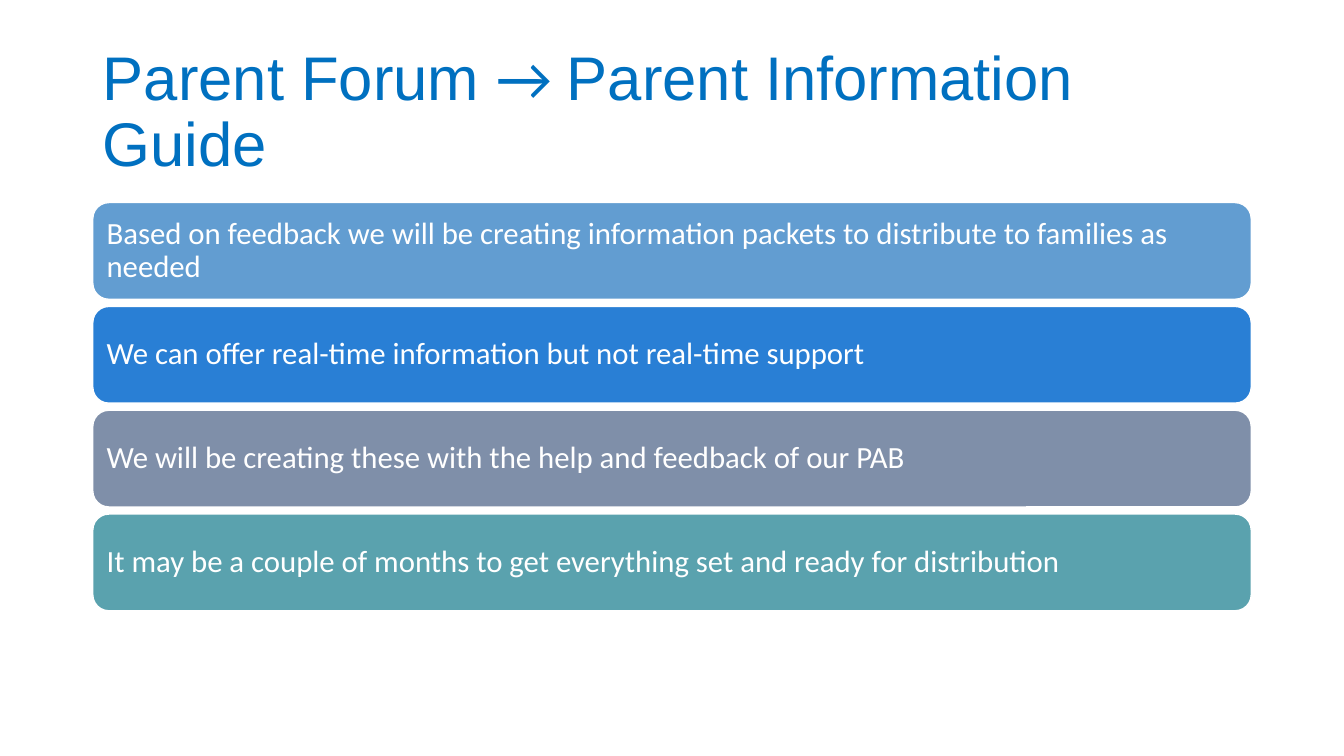
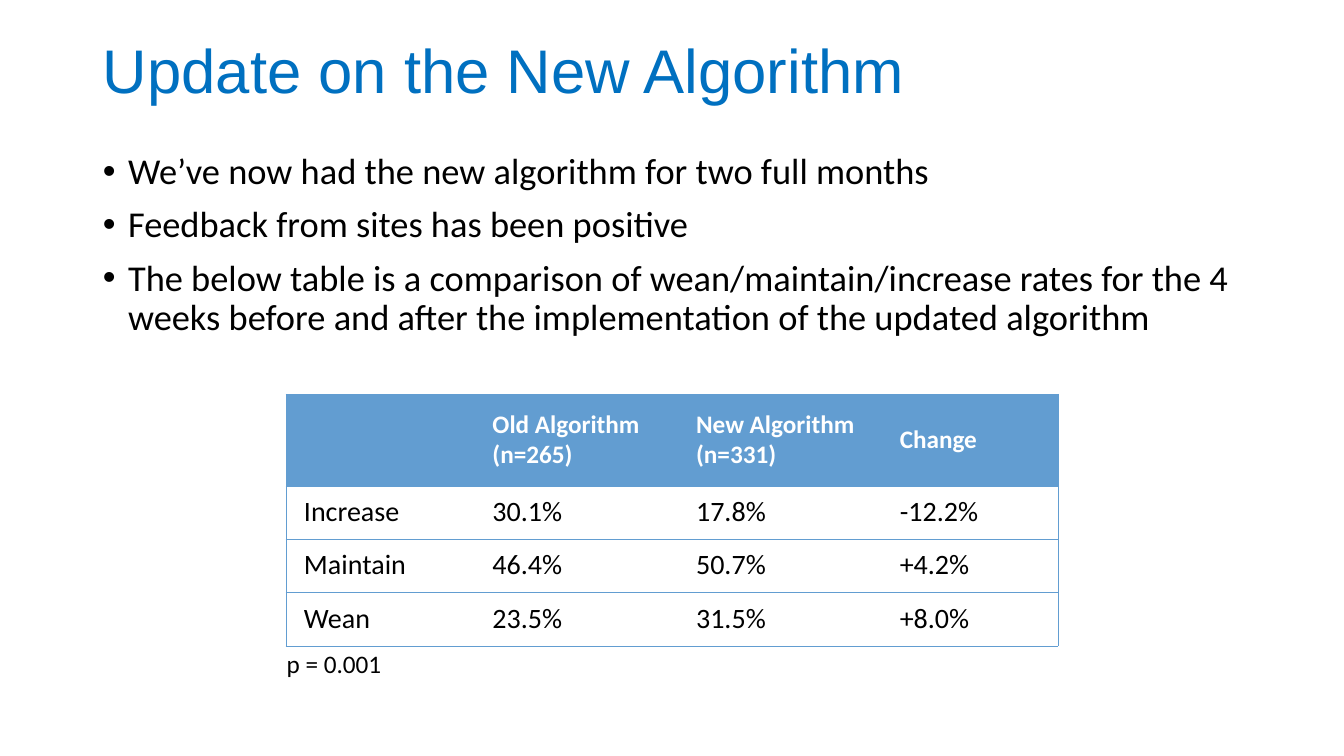
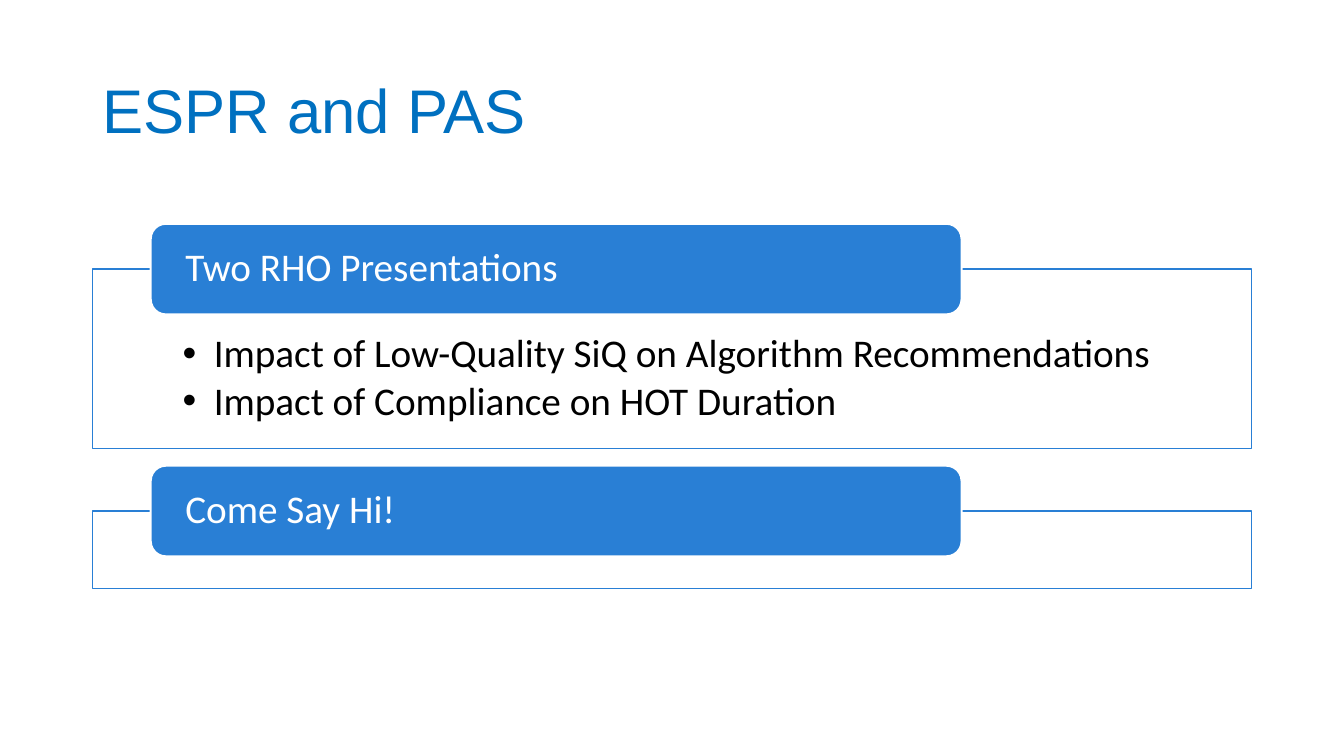
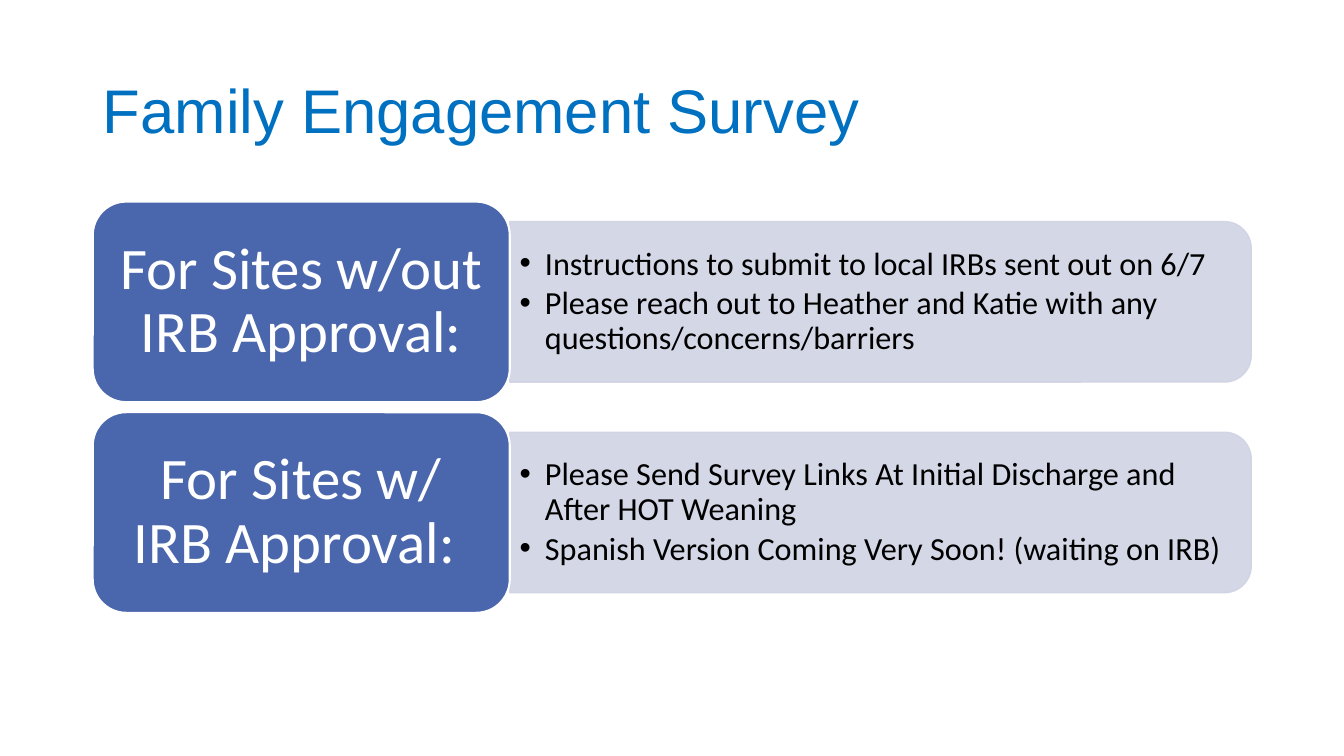
import lxml.etree
import pptx
import pptx.dml.color
import pptx.enum.shapes
import pptx.enum.text
import pptx.oxml.ns
import pptx.util

RGBColor = pptx.dml.color.RGBColor
SHAPE = pptx.enum.shapes.MSO_SHAPE
ANCHOR = pptx.enum.text.MSO_ANCHOR
ALIGN = pptx.enum.text.PP_ALIGN
Inches = pptx.util.Inches
Pt = pptx.util.Pt
qn = pptx.oxml.ns.qn

# Palette and fonts
WHITE = RGBColor(0xFF, 0xFF, 0xFF)
BLACK = RGBColor(0x00, 0x00, 0x00)
TITLE_BLUE = RGBColor(0x00, 0x70, 0xC0)
SKY = RGBColor(0x62, 0x9D, 0xD1)
BLUE = RGBColor(0x29, 0x7F, 0xD5)
SLATE = RGBColor(0x7F, 0x8F, 0xA9)
TEAL = RGBColor(0x5A, 0xA2, 0xAE)
INDIGO = RGBColor(0x4A, 0x66, 0xAC)
LAVENDER = RGBColor(0xD0, 0xD3, 0xE3)
TITLE_FONT, BODY_FONT = "Arial", "Calibri"

# Shared grid, in inches
SLIDE_W, SLIDE_H = 13.33, 7.5
MARGIN = 0.92
CONTENT_W = SLIDE_W - 2 * MARGIN
TITLE_TOP, TITLE_H = 0.4, 1.45

LAYOUT_BODY, LAYOUT_TITLE_ONLY = 1, 5
NO_TABLE_STYLE = "{2D5ABB26-0587-4C30-8999-92F81FD0307C}"


def place(part, left, top, width, height):
    part.left, part.top = Inches(left), Inches(top)
    part.width, part.height = Inches(width), Inches(height)


def add_bullet(paragraph, indent):
    properties = paragraph._p.get_or_add_pPr()
    properties.set("marL", str(Inches(indent)))
    properties.set("indent", str(-Inches(indent)))
    lxml.etree.SubElement(properties, qn("a:buFont")).set("typeface", "Arial")
    lxml.etree.SubElement(properties, qn("a:buChar")).set("char", "•")


def style_paragraph(paragraph, size, color, font=BODY_FONT, bold=False,
                    align=ALIGN.LEFT, spacing=0.9):
    paragraph.alignment = align
    paragraph.line_spacing = spacing
    paragraph.space_before = paragraph.space_after = Pt(0)
    paragraph.font.name, paragraph.font.size = font, Pt(size)
    paragraph.font.bold, paragraph.font.color.rgb = bold, color


def set_frame(frame, anchor, insets=(0.1, 0.05, 0.1, 0.05)):
    frame.word_wrap = True
    frame.auto_size = pptx.enum.text.MSO_AUTO_SIZE.NONE
    frame.vertical_anchor = anchor
    (frame.margin_left, frame.margin_top,
     frame.margin_right, frame.margin_bottom) = map(Inches, insets)


def write_line(frame, text, size, color, **style):
    frame.text = text
    style_paragraph(frame.paragraphs[0], size, color, **style)


def write_list(frame, items, size, indent, gap):
    """Bulleted list with the same gap, in points, between items."""
    for index, item in enumerate(items):
        paragraph = frame.add_paragraph() if index else frame.paragraphs[0]
        paragraph.text = item
        add_bullet(paragraph, indent)
        style_paragraph(paragraph, size, BLACK)
        if index:
            paragraph.space_before = Pt(gap)


def add_titled_slide(deck, *title_runs, layout=LAYOUT_TITLE_ONLY, top=TITLE_TOP):
    """Title runs are strings; an arrow run takes the body font."""
    slide = deck.slides.add_slide(deck.slide_layouts[layout])
    title = slide.shapes.title
    place(title, MARGIN, top, CONTENT_W, TITLE_H)
    set_frame(title.text_frame, ANCHOR.MIDDLE)
    paragraph = title.text_frame.paragraphs[0]
    style_paragraph(paragraph, 44, TITLE_BLUE, font=TITLE_FONT)
    for text in title_runs:
        run = paragraph.add_run()
        run.text = text
        if "→" in text:
            run.font.name = BODY_FONT
    return slide


def add_panel(slide, kind, box, fill, line, line_width):
    panel = slide.shapes.add_shape(kind, *map(Inches, box))
    panel.shadow.inherit = False
    panel.fill.solid()
    panel.fill.fore_color.rgb = fill
    panel.line.color.rgb = line
    panel.line.width = Pt(line_width)
    return panel


def add_label(slide, box, fill, text, size, insets, line_width=1.5, align=ALIGN.LEFT):
    label = add_panel(slide, SHAPE.ROUNDED_RECTANGLE, box, fill, WHITE, line_width)
    set_frame(label.text_frame, ANCHOR.MIDDLE, insets)
    write_line(label.text_frame, text, size, WHITE, align=align)


def add_text_box(slide, box, anchor):
    frame = slide.shapes.add_textbox(*map(Inches, box)).text_frame
    set_frame(frame, anchor)
    return frame


def set_opacity(panel, percent):
    for color in panel._element.spPr.iter(qn("a:srgbClr")):
        lxml.etree.SubElement(color, qn("a:alpha")).set("val", str(percent * 1000))


def add_border(cell, side):
    edge = lxml.etree.SubElement(cell._tc.get_or_add_tcPr(), qn("a:ln" + side))
    edge.set("w", str(Pt(0.5)))
    fill = lxml.etree.SubElement(edge, qn("a:solidFill"))
    lxml.etree.SubElement(fill, qn("a:srgbClr")).set("val", str(SKY))


def add_rate_table(slide, box, column_widths, row_heights, rows):
    table = slide.shapes.add_table(len(rows), len(column_widths),
                                   *map(Inches, box)).table
    table._tbl.tblPr.find(qn("a:tableStyleId")).text = NO_TABLE_STYLE
    table.horz_banding = False
    for column, width in zip(table.columns, column_widths):
        column.width = Inches(width)
    for r, (texts, height) in enumerate(zip(rows, row_heights)):
        table.rows[r].height = Inches(height)
        header = r == 0
        for c, text in enumerate(texts):
            cell = table.cell(r, c)
            if c == 0:
                add_border(cell, "L")
            if c == len(texts) - 1:
                add_border(cell, "R")
            add_border(cell, "T")
            add_border(cell, "B")
            cell.fill.solid()
            cell.fill.fore_color.rgb = SKY if header else WHITE
            cell.vertical_anchor = ANCHOR.MIDDLE if header else ANCHOR.TOP
            cell.margin_left = cell.margin_right = Inches(0.18)
            cell.margin_top = cell.margin_bottom = Inches(0.09)
            write_line(cell.text_frame, text, 18 if header else 20,
                       WHITE if header else BLACK, bold=header, spacing=1.0)


def build_parent_guide(deck):
    slide = add_titled_slide(deck, "Parent Forum ", "→ ", "Parent Information Guide")
    messages = [
        (SKY, "Based on feedback we will be creating information packets to "
              "distribute to families as needed"),
        (BLUE, "We can offer real-time information but not real-time support"),
        (SLATE, "We will be creating these with the help and feedback of our PAB"),
        (TEAL, "It may be a couple of months to get everything set and ready "
               "for distribution"),
    ]
    first_top, bar_h, gap = 2.01, 0.96, 0.07
    for row, (fill, message) in enumerate(messages):
        box = (MARGIN, first_top + row * (bar_h + gap), CONTENT_W, bar_h)
        add_label(slide, box, fill, message, 22, (0.09,) * 4, line_width=1)


def build_algorithm_update(deck):
    slide = add_titled_slide(deck, "Update on the New Algorithm",
                             layout=LAYOUT_BODY, top=0)
    # Summary points
    summary = slide.placeholders[1]
    place(summary, MARGIN, 1.47, CONTENT_W, 2.47)
    set_frame(summary.text_frame, ANCHOR.TOP)
    write_list(summary.text_frame, [
        "We’ve now had the new algorithm for two full months",
        "Feedback from sites has been positive",
        "The below table is a comparison of wean/maintain/increase rates for the 4 "
        "weeks before and after the implementation of the updated algorithm",
    ], 26, 0.25, 10)

    # Rates before and after, centred on two thirds of the content width
    table_left = MARGIN + CONTENT_W / 6
    row_heights = [0.91, 0.53, 0.53, 0.53]
    add_rate_table(slide, (table_left, 3.91, CONTENT_W * 2 / 3, sum(row_heights)),
                   [1.87, 2.02, 2.02, 1.75], row_heights, [
        ("", "Old Algorithm (n=265)", "New Algorithm (n=331)", "Change"),
        ("Increase", "30.1%", "17.8%", "-12.2%"),
        ("Maintain", "46.4%", "50.7%", "+4.2%"),
        ("Wean", "23.5%", "31.5%", "+8.0%"),
    ])
    p_value = add_text_box(slide, (table_left - 0.09, 6.38, 1.53, 0.4), ANCHOR.TOP)
    write_line(p_value, "p = 0.001", 18, BLACK, spacing=1.0)


def build_conferences(deck):
    slide = add_titled_slide(deck, "ESPR and PAS")
    sections = [
        ("Two RHO Presentations", 1.78,
         ["Impact of Low-Quality SiQ on Algorithm Recommendations",
          "Impact of Compliance on HOT Duration"]),
        ("Come Say Hi!", 0.77, []),
    ]
    top, tab_h, gap = 2.22, 0.9, 0.17
    for heading, frame_h, talks in sections:
        # The heading tab straddles the top edge of its frame
        frame_top = top + tab_h / 2
        outline = add_panel(slide, SHAPE.RECTANGLE,
                            (MARGIN, frame_top, CONTENT_W, frame_h), WHITE, BLUE, 1)
        if talks:
            set_frame(outline.text_frame, ANCHOR.TOP, (0.89, 0.64, 0.89, 0.22))
            write_list(outline.text_frame, talks, 28, 0.31, 4)
        tab = (MARGIN + 0.05 * CONTENT_W, top, 0.7 * CONTENT_W, tab_h)
        add_label(slide, tab, BLUE, heading, 28, (0.3, 0, 0.3, 0))
        top = frame_top + frame_h + gap


def build_survey(deck):
    slide = add_titled_slide(deck, "Family Engagement Survey")
    groups = [
        ("For Sites w/out IRB Approval:",
         ["Instructions to submit to local IRBs sent out on 6/7",
          "Please reach out to Heather and Katie with any "
          "questions/concerns/barriers"]),
        ("For Sites w/ IRB Approval: ",
         ["Please Send Survey Links At Initial Discharge and After HOT Weaning",
          "Spanish Version Coming Very Soon! (waiting on IRB)"]),
    ]
    first_top, label_h = 2.0, 1.99
    label_w = 0.36 * CONTENT_W
    panel_left, panel_w, panel_h = MARGIN + label_w, CONTENT_W - label_w, 0.8 * label_h
    for row, (heading, steps) in enumerate(groups):
        top = first_top + row * 1.05 * label_h
        middle = top + label_h / 2
        # Quarter turn puts the two rounded corners on the right
        panel = add_panel(slide, SHAPE.ROUND_2_SAME_RECTANGLE,
                          (panel_left + (panel_w - panel_h) / 2, middle - panel_w / 2,
                           panel_h, panel_w), LAVENDER, LAVENDER, 1)
        panel.rotation = 90
        set_opacity(panel, 90)
        details = add_text_box(slide, (panel_left, middle - panel_h / 2,
                                       panel_w - 0.08, panel_h), ANCHOR.MIDDLE)
        write_list(details, steps, 23, 0.25, 3.5)
        add_label(slide, (MARGIN, top, label_w, label_h), INDIGO, heading, 42,
                  (0.17, 0.09, 0.17, 0.09), align=ALIGN.CENTER)


def main():
    deck = pptx.Presentation()
    deck.slide_width, deck.slide_height = Inches(SLIDE_W), Inches(SLIDE_H)
    build_parent_guide(deck)
    build_algorithm_update(deck)
    build_conferences(deck)
    build_survey(deck)
    deck.save("out.pptx")


if __name__ == "__main__":
    main()
